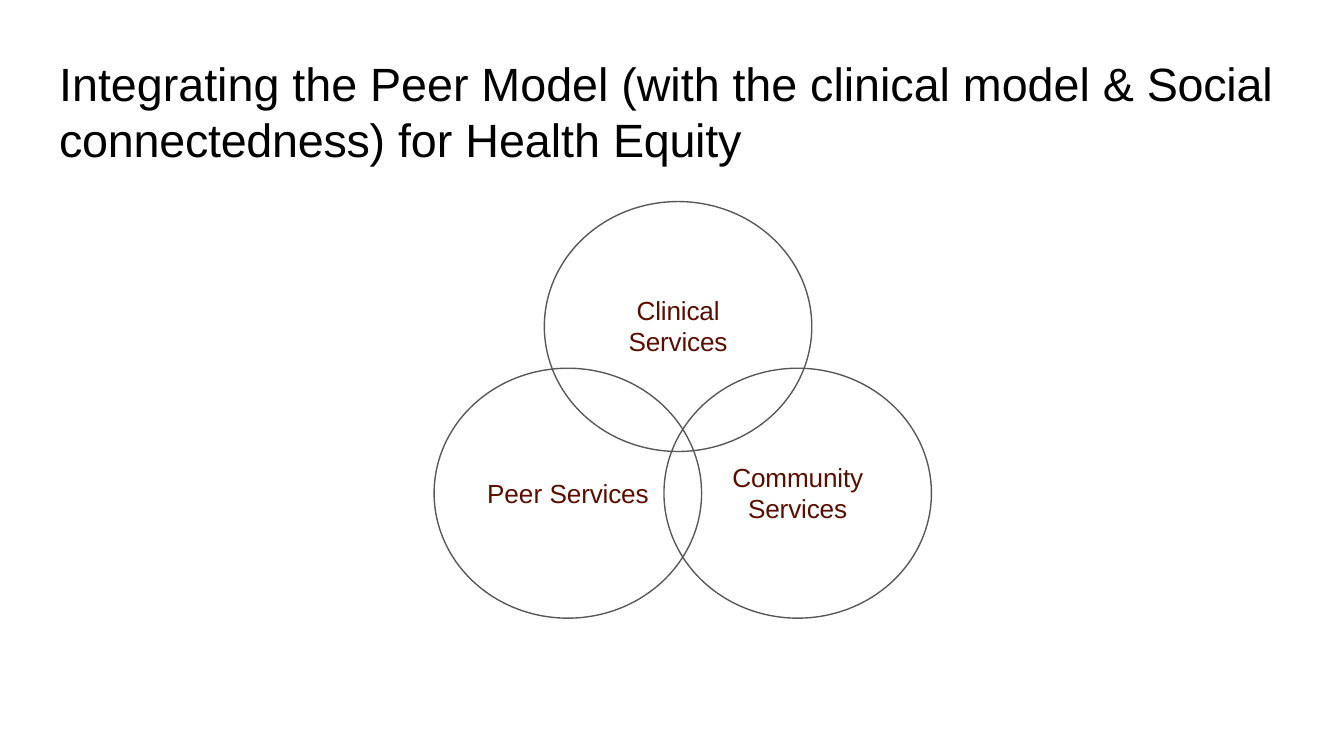
from typing import NamedTuple

from pptx import Presentation
from pptx import util as u
from pptx.dml.color import RGBColor
from pptx.enum import shapes, text

PX = u.Inches(0.01)
FONT = "Arial"
BLACK = RGBColor(0x00, 0x00, 0x00)
MAROON = RGBColor(0x5B, 0x0E, 0x00)
GREY = RGBColor(0x58, 0x58, 0x58)

SLIDE_WIDTH = 1000
CIRCLE_WIDTH, CIRCLE_HEIGHT = 199, 186


class Run(NamedTuple):
    text: str
    tracking: int = 0  # hundredths of a point


class Circle(NamedTuple):
    left: int
    top: int
    label_width: int
    label_height: int
    label: list[Run]


TITLE = [
    Run("Integrating the Peer Model (with the clinical model & "),
    Run("Social connectedness) ", -10),
    Run("for Health "),
    Run("Equity", -10),
]

CIRCLES = [
    Circle(405, 150, 77, 50, [Run("Clinical Services", -10)]),
    Circle(323, 274, 124, 26, [Run("Peer "), Run("Services", -10)]),
    Circle(494, 274, 101, 50, [Run("Community Services", -10)]),
]


def place(shape, left: float, top: float, width: int, height: int) -> None:
    shape.left, shape.top = round(left * PX), round(top * PX)
    shape.width, shape.height = width * PX, height * PX


def write(shape, runs: list[Run], size: int, color: RGBColor,
          alignment: text.PP_ALIGN) -> None:
    """Fill a shape with one paragraph, without side margins."""
    frame = shape.text_frame
    frame.word_wrap = True
    frame.auto_size = text.MSO_AUTO_SIZE.NONE
    frame.vertical_anchor = text.MSO_ANCHOR.TOP
    frame.margin_left = frame.margin_right = frame.margin_bottom = 0
    frame.margin_top = PX
    paragraph = frame.paragraphs[0]
    paragraph.alignment = alignment
    paragraph.line_spacing = 1.0
    paragraph.space_before = u.Pt(1)
    for item in runs:
        run = paragraph.add_run()
        run.text = item.text
        run.font.name = FONT
        run.font.size = u.Pt(size)
        run.font.color.rgb = color
        run._r.get_or_add_rPr().set("spc", str(item.tracking))


def draw_circle(slide, circle: Circle) -> None:
    """Draw an outlined circle with its label centred on it."""
    oval = slide.shapes.add_shape(
        shapes.MSO_SHAPE.OVAL, circle.left * PX, circle.top * PX,
        CIRCLE_WIDTH * PX, CIRCLE_HEIGHT * PX)
    oval.shadow.inherit = False
    oval.fill.background()
    oval.line.color.rgb = GREY
    oval.line.width = u.Pt(0.75)

    label = slide.shapes.add_textbox(0, 0, 0, 0)
    write(label, circle.label, 14, MAROON, text.PP_ALIGN.CENTER)
    place(label,
          circle.left + (CIRCLE_WIDTH - circle.label_width) / 2,
          circle.top + (CIRCLE_HEIGHT - circle.label_height) / 2,
          circle.label_width, circle.label_height)


def main() -> None:
    presentation = Presentation()
    presentation.slide_width = SLIDE_WIDTH * PX
    presentation.slide_height = SLIDE_WIDTH * PX * 9 // 16
    slide = presentation.slides.add_slide(presentation.slide_layouts[5])

    title = slide.shapes.title
    place(title, 44, 40, 908, 86)
    write(title, TITLE, 25, BLACK, text.PP_ALIGN.LEFT)

    for circle in CIRCLES:
        draw_circle(slide, circle)

    presentation.save("out.pptx")


if __name__ == "__main__":
    main()
